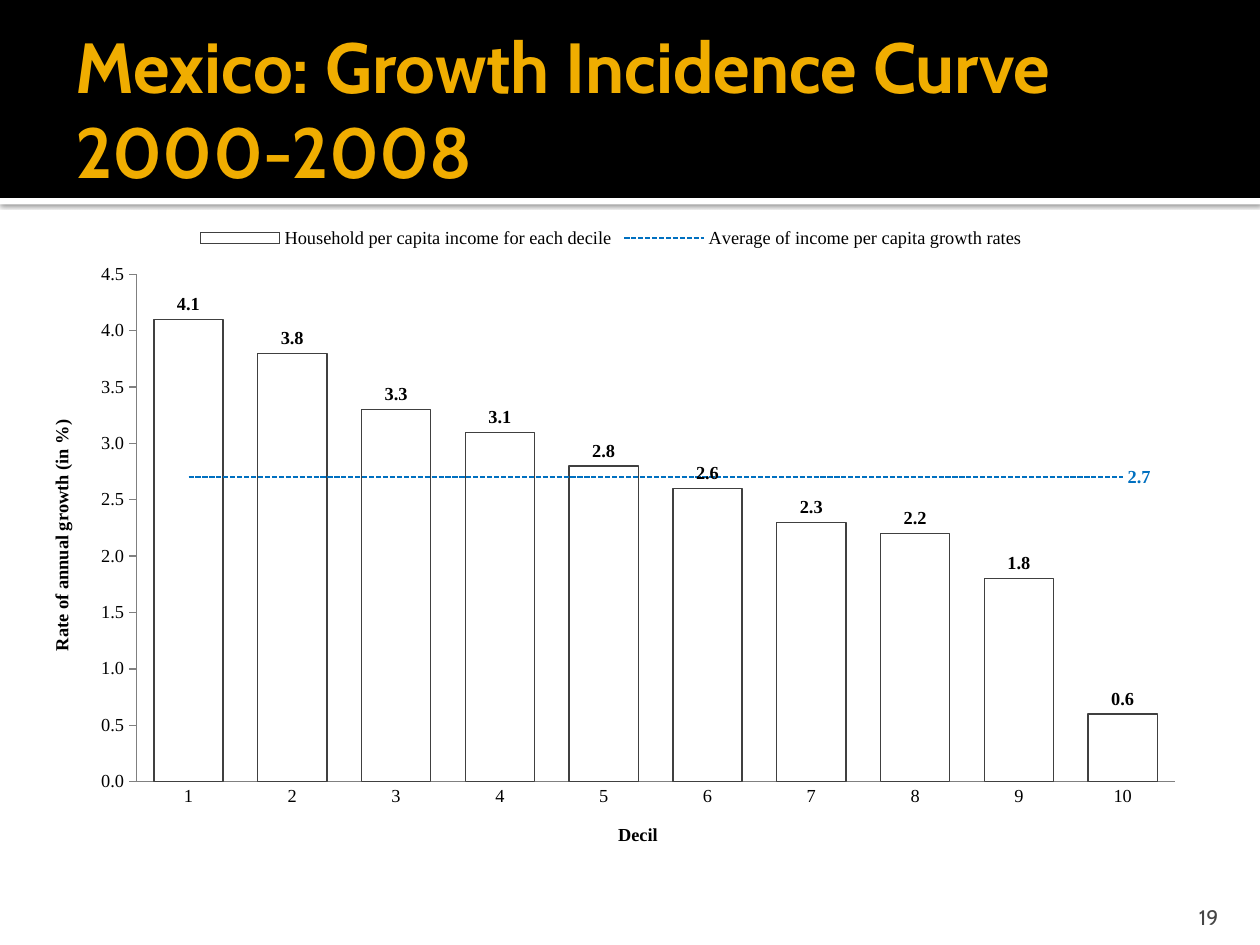
from lxml import etree
from pptx import Presentation
from pptx.chart.data import CategoryChartData
from pptx.dml.color import RGBColor
from pptx.enum.chart import XL_CHART_TYPE, XL_LABEL_POSITION, XL_LEGEND_POSITION, XL_MARKER_STYLE, XL_TICK_MARK
from pptx.enum.dml import MSO_LINE
from pptx.enum.shapes import MSO_SHAPE
from pptx.enum.text import MSO_ANCHOR, PP_ALIGN
from pptx.oxml import parse_xml
from pptx.oxml.ns import qn
from pptx.util import Cm, Pt

NS = ('xmlns:c="http://schemas.openxmlformats.org/drawingml/2006/chart" '
      'xmlns:a="http://schemas.openxmlformats.org/drawingml/2006/main"')
BAND_HEIGHT, STRIP_HEIGHT = 3.99, 0.13
DECILE_GROWTH = [4.1, 3.8, 3.3, 3.1, 2.8, 2.6, 2.3, 2.2, 1.8, 0.6]
AVERAGE_GROWTH = 2.7
CHART_FONT = {"name": "Times New Roman", "size": Pt(10.5)}


def color(hex_value):
    return RGBColor.from_string(hex_value)


def style_font(font, values, hex_value):
    for key, value in values.items():
        setattr(font, key, value)
    font.color.rgb = color(hex_value)


def style_line(line, hex_value, width):
    line.color.rgb = color(hex_value)
    line.width = Pt(width)


def add_bar(page, left, top, width, height, hex_value):
    bar = page.shapes.add_shape(MSO_SHAPE.RECTANGLE, Cm(left), Cm(top), Cm(width), Cm(height))
    bar.shadow.inherit = False
    bar.fill.solid()
    bar.fill.fore_color.rgb = color(hex_value)
    bar.line.fill.background()
    return bar


def add_text(page, left, top, width, height, text, font, hex_value, frame_format, align):
    box = page.shapes.add_textbox(Cm(left), Cm(top), Cm(width), Cm(height))
    for key, value in frame_format.items():
        setattr(box.text_frame, key, value)
    para = box.text_frame.paragraphs[0]
    para.alignment = align
    span = para.add_run()
    span.text = text
    style_font(span.font, font, hex_value)


def add_header(page, left, top, width):
    # White strip with a soft shadow, black band above it
    strip = add_bar(page, left, top + BAND_HEIGHT, width, STRIP_HEIGHT, "FFFFFF")
    effects = strip._element.spPr.find(qn("a:effectLst"))
    effects.append(parse_xml(
        f'<a:outerShdw {NS} blurRad="{Pt(2.5)}" dist="{Pt(0.8)}" dir="5400000" rotWithShape="0">'
        '<a:srgbClr val="000000"><a:alpha val="60000"/></a:srgbClr></a:outerShdw>'))
    add_bar(page, left, top, width, BAND_HEIGHT, "000000")
    # Title
    add_text(page, left + 1.27, top + 0.43, width - 2.54, 3.48,
             "Mexico: Growth Incidence Curve 2000-2008",
             {"name": "Cabin", "size": Pt(40.5), "bold": True}, "F0AD00",
             {"word_wrap": True, "vertical_anchor": MSO_ANCHOR.MIDDLE, "margin_right": Cm(0.13)},
             PP_ALIGN.LEFT)


def add_page_number(page, left, top, width, height):
    add_text(page, left, top, width, height, "19", {"name": "Cabin", "size": Pt(12)}, "454545",
             {"word_wrap": True, "vertical_anchor": MSO_ANCHOR.BOTTOM, "margin_bottom": 0},
             PP_ALIGN.RIGHT)


def move_to_line_plot(chart):
    """Turn the last column series into a line on the same axes."""
    columns = chart.plots[0]._element
    series = columns.findall(qn("c:ser"))[-1]
    for column_only in series.findall(qn("c:invertIfNegative")):
        series.remove(column_only)
    lines = parse_xml(f'<c:lineChart {NS}><c:grouping val="standard"/><c:varyColors val="0"/>'
                      '<c:marker val="1"/></c:lineChart>')
    lines.insert(2, series)
    for axis_id in columns.findall(qn("c:axId")):
        etree.SubElement(lines, qn("c:axId")).set("val", axis_id.get("val"))
    columns.addnext(lines)


def set_plot_area(chart, **fractions):
    area = chart._chartSpace.chart.plotArea
    for old in area.findall(qn("c:layout")):
        area.remove(old)
    parts = "".join(f'<c:{key} val="{value}"/>' for key, value in fractions.items())
    area.insert(0, parse_xml(
        f'<c:layout {NS}><c:manualLayout><c:layoutTarget val="inner"/>'
        f'<c:xMode val="edge"/><c:yMode val="edge"/>{parts}</c:manualLayout></c:layout>'))


def style_axis(axis, title, tick_mark):
    axis.has_major_gridlines = False
    axis.major_tick_mark = tick_mark
    axis.minor_tick_mark = XL_TICK_MARK.NONE
    style_line(axis.format.line, "808080", 0.75)
    style_font(axis.tick_labels.font, CHART_FONT, "000000")
    frame = axis.axis_title.text_frame
    frame.text = title
    style_font(frame.paragraphs[0].runs[0].font, {**CHART_FONT, "bold": True}, "000000")
    return frame


def add_growth_chart(page, left, top, width, height):
    data = CategoryChartData(number_format="#,##0.0")
    data.categories = [str(decile) for decile in range(1, len(DECILE_GROWTH) + 1)]
    data.add_series("Household per capita income for each decile", DECILE_GROWTH)
    data.add_series("Average of income per capita growth rates",
                    [AVERAGE_GROWTH] * len(DECILE_GROWTH))
    chart = page.shapes.add_chart(XL_CHART_TYPE.COLUMN_CLUSTERED, Cm(left), Cm(top),
                                  Cm(width), Cm(height), data).chart
    style_font(chart.font, CHART_FONT, "000000")
    chart.has_title = False
    chart.has_legend = True
    chart.legend.position = XL_LEGEND_POSITION.TOP
    chart.legend.include_in_layout = False
    style_font(chart.legend.font, CHART_FONT, "000000")
    move_to_line_plot(chart)
    set_plot_area(chart, x=0.095, y=0.09, w=0.886, h=0.76)

    # Axes
    style_axis(chart.category_axis, "Decil", XL_TICK_MARK.NONE)
    growth_axis = chart.value_axis
    frame = style_axis(growth_axis, "Rate of annual growth (in %)", XL_TICK_MARK.OUTSIDE)
    frame._txBody.find(qn("a:bodyPr")).set("rot", "-5400000")
    for key, value in {"minimum_scale": 0, "maximum_scale": 4.5, "major_unit": 0.5}.items():
        setattr(growth_axis, key, value)
    growth_axis.tick_labels.number_format = "#,##0.0"
    growth_axis.tick_labels.number_format_is_linked = False

    # Decile columns
    column_plot, line_plot = chart.plots
    column_plot.gap_width = 50
    column_plot.vary_by_categories = False
    columns = column_plot.series[0]
    columns.format.fill.solid()
    columns.format.fill.fore_color.rgb = color("FFFFFF")
    style_line(columns.format.line, "404040", 0.75)
    labels = columns.data_labels
    for key, value in {"show_value": True, "number_format": "#,##0.0",
                       "number_format_is_linked": False,
                       "position": XL_LABEL_POSITION.OUTSIDE_END}.items():
        setattr(labels, key, value)
    style_font(labels.font, {**CHART_FONT, "bold": True}, "000000")

    # Dashed average, labelled at its last point
    average = line_plot.series[0]
    average.smooth = False
    average.marker.style = XL_MARKER_STYLE.NONE
    style_line(average.format.line, "0070C0", 1)
    average.format.line.dash_style = MSO_LINE.SQUARE_DOT
    average.data_labels.show_value = False
    last_label = average.points[len(DECILE_GROWTH) - 1].data_label
    style_font(last_label.font, {**CHART_FONT, "bold": True}, "0070C0")
    last_label.position = XL_LABEL_POSITION.RIGHT


def main():
    deck = Presentation()
    deck.slide_width, deck.slide_height = Cm(25.4), Cm(19.05)
    page = deck.slides.add_slide(deck.slide_layouts[6])
    add_header(page, 0, 0, 25.4)
    add_page_number(page, 22.78, 17.98, 2.03, 0.76)
    add_growth_chart(page, 0.51, 4.32, 23.62, 13.46)
    deck.save("out.pptx")


if __name__ == "__main__":
    main()
